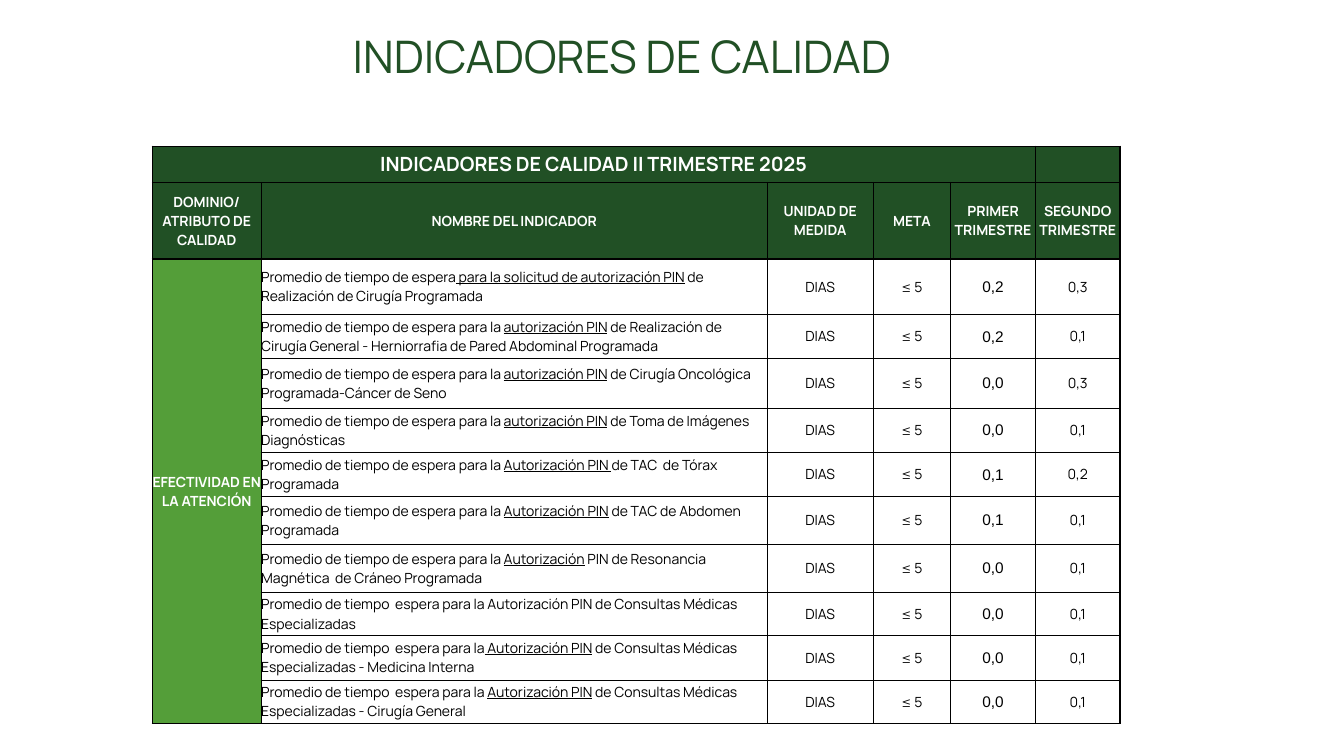
from lxml import etree
from pptx import Presentation
from pptx.dml.color import RGBColor
from pptx.enum.text import MSO_ANCHOR, PP_ALIGN
from pptx.oxml.ns import qn
from pptx.util import Inches, Pt

MIDDLE = MSO_ANCHOR.MIDDLE
LEFT, CENTER = PP_ALIGN.LEFT, PP_ALIGN.CENTER

DARK_GREEN = RGBColor(0x21, 0x50, 0x25)
GREEN = RGBColor(0x54, 0x9E, 0x39)
WHITE = RGBColor(0xFF, 0xFF, 0xFF)
BLACK = RGBColor(0x00, 0x00, 0x00)

HEADING = {"size": Pt(10), "name": "Manrope", "bold": True}
BODY = {"size": Pt(10), "name": "Manrope", "bold": False}
FIRST_QUARTER = {"size": Pt(11), "name": "Arial", "bold": False}

COL_WIDTHS = [1.08, 5.02, 1.05, 0.77, 0.84, 0.84]
ROW_HEIGHTS = [0.36, 0.76, 0.55, 0.44, 0.49, 0.44, 0.44, 0.47, 0.48, 0.43, 0.44, 0.43]
HEADERS = ["DOMINIO/ ATRIBUTO DE CALIDAD", "NOMBRE DEL INDICADOR", "UNIDAD DE MEDIDA",
           "META", "PRIMER TRIMESTRE", "SEGUNDO TRIMESTRE"]

# Indicator name (underlined part between bars), first quarter, second quarter
INDICATORS = [
    ("Promedio de tiempo de espera| para la solicitud de autorización PIN|"
     " de Realización de Cirugía Programada", "0,2", "0,3"),
    ("Promedio de tiempo de espera para la |autorización PIN| de Realización de "
     "Cirugía General - Herniorrafia de Pared Abdominal Programada", "0,2", "0,1"),
    ("Promedio de tiempo de espera para la |autorización PIN| de Cirugía Oncológica "
     "Programada-Cáncer de Seno", "0,0", "0,3"),
    ("Promedio de tiempo de espera para la |autorización PIN| de Toma de Imágenes "
     "Diagnósticas", "0,0", "0,1"),
    ("Promedio de tiempo de espera para la |Autorización PIN |de TAC  de Tórax "
     "Programada", "0,1", "0,2"),
    ("Promedio de tiempo de espera para la |Autorización PIN| de TAC de Abdomen "
     "Programada", "0,1", "0,1"),
    ("Promedio de tiempo de espera para la |Autorización| PIN de Resonancia "
     "Magnética  de Cráneo Programada", "0,0", "0,1"),
    ("Promedio de tiempo  espera para la Autorización PIN de Consultas Médicas "
     "Especializadas", "0,0", "0,1"),
    ("Promedio de tiempo  espera para la| Autorización PIN| de Consultas Médicas "
     "Especializadas - Medicina Interna", "0,0", "0,1"),
    ("Promedio de tiempo  espera para la |Autorización PIN| de Consultas Médicas "
     "Especializadas - Cirugía General", "0,0", "0,1"),
]


def write_text(p, text, font, color, align):
    """Write text into a paragraph, underlining every part between bars."""
    p.alignment = align
    for i, part in enumerate(text.split("|")):
        r = p.add_run()
        r.text = part
        for name, value in font.items():
            setattr(r.font, name, value)
        r.font.color.rgb = color
        if i % 2:
            r.font.underline = True


def add_borders(cell):
    tc_pr = cell._tc.get_or_add_tcPr()
    for side in ("lnL", "lnR", "lnT", "lnB"):
        ln = etree.SubElement(tc_pr, qn(f"a:{side}"), w=str(Pt(1)))
        fill = etree.SubElement(ln, qn("a:solidFill"))
        etree.SubElement(fill, qn("a:srgbClr"), val=str(BLACK))


def style_cell(cell, fill):
    add_borders(cell)
    cell.fill.solid()
    cell.fill.fore_color.rgb = fill
    cell.vertical_anchor = MIDDLE
    for side in ("left", "right", "top", "bottom"):
        setattr(cell, f"margin_{side}", 0)


def add_title(s):
    box = s.shapes.add_textbox(Inches(3.4), Inches(-0.14), Inches(10.32), Inches(1.45))
    tf = box.text_frame
    tf.word_wrap = True
    tf.vertical_anchor = MIDDLE
    p = tf.paragraphs[0]
    p.line_spacing = 0.9
    write_text(p, "INDICADORES DE CALIDAD", {"size": Pt(32), "name": "Manrope"},
               DARK_GREEN, LEFT)


def add_grid(s):
    """Add the empty table with its sizes, borders, fills and merged cells."""
    frame = s.shapes.add_table(len(ROW_HEIGHTS), len(COL_WIDTHS), Inches(1.51), Inches(1.45),
                               Inches(sum(COL_WIDTHS)), Inches(sum(ROW_HEIGHTS)))
    table = frame.table
    table.first_row = table.horz_banding = False
    for column, width in zip(table.columns, COL_WIDTHS):
        column.width = Inches(width)
    for i, (row, height) in enumerate(zip(table.rows, ROW_HEIGHTS)):
        row.height = Inches(height)
        for j, cell in enumerate(row.cells):
            style_cell(cell, DARK_GREEN if i < 2 else GREEN if j == 0 else WHITE)
    table.cell(0, 0).merge(table.cell(0, 4))
    table.cell(2, 0).merge(table.cell(len(ROW_HEIGHTS) - 1, 0))
    return table


def fill_table(table):
    def put(row, col, text, font, color=BLACK, align=CENTER):
        p = table.cell(row, col).text_frame.paragraphs[0]
        write_text(p, text, font, color, align)

    put(0, 0, "INDICADORES DE CALIDAD II TRIMESTRE 2025", {**HEADING, "size": Pt(14)}, WHITE)
    for col, header in enumerate(HEADERS):
        put(1, col, header, HEADING, WHITE)
    put(2, 0, "EFECTIVIDAD EN LA ATENCIÓN", HEADING, WHITE)
    for row, (indicator, first, second) in enumerate(INDICATORS, start=2):
        put(row, 1, indicator, BODY, align=LEFT)
        put(row, 2, "DIAS", BODY)
        put(row, 3, "≤ 5", BODY)
        put(row, 4, first, FIRST_QUARTER)
        put(row, 5, second, BODY)


def main():
    prs = Presentation()
    prs.slide_width, prs.slide_height = Inches(13.33), Inches(7.5)
    s = prs.slides.add_slide(prs.slide_layouts[6])
    add_title(s)
    fill_table(add_grid(s))
    prs.save("out.pptx")


if __name__ == "__main__":
    main()
